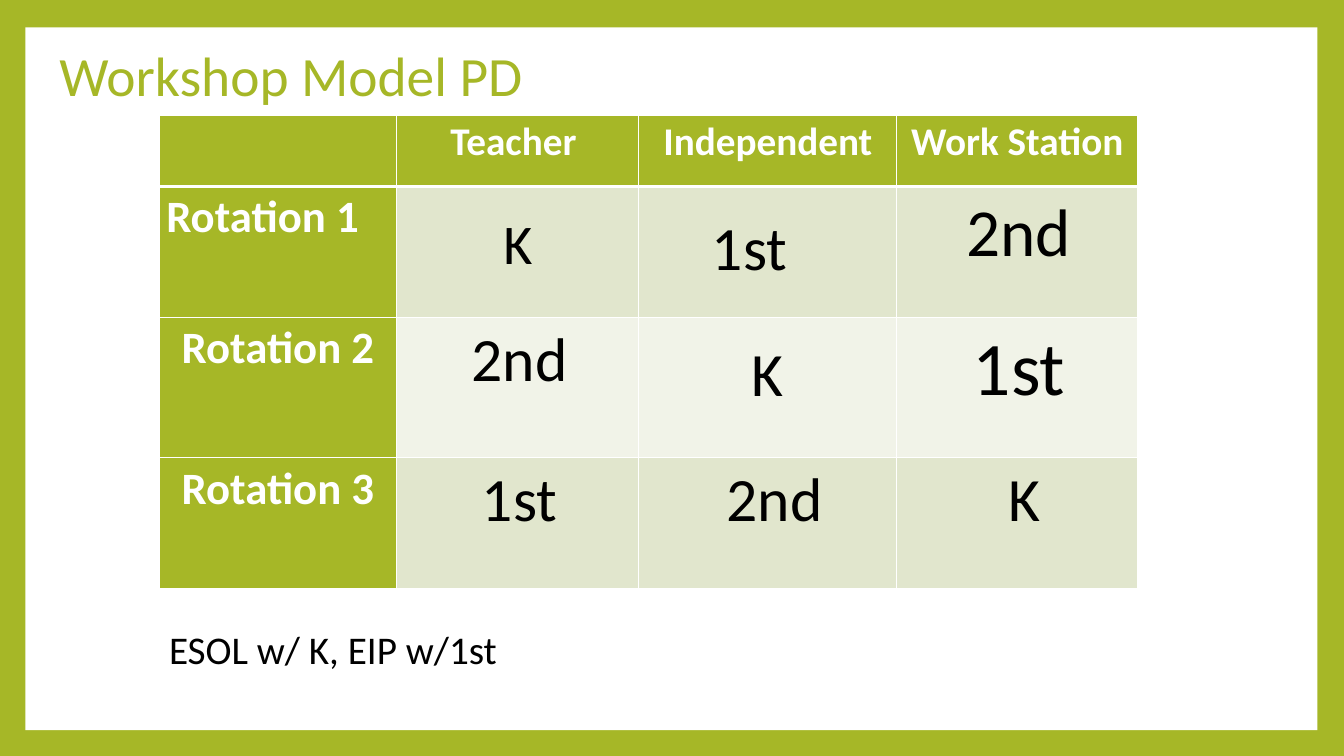
import pptx
import pptx.dml.color
import pptx.enum.shapes
import pptx.enum.text
import pptx.oxml
import pptx.oxml.ns
import pptx.util

Cm = pptx.util.Cm
Pt = pptx.util.Pt
ALIGN = pptx.enum.text.PP_ALIGN
ANCHOR = pptx.enum.text.MSO_ANCHOR

COLORS = {
    "green": "A6B727",
    "white": "FFFFFF",
    "black": "000000",
    "band_dark": "E1E6CD",
    "band_light": "F1F3E8",
}


def add_text(paragraph, text, size, color, bold=False):
    run = paragraph.add_run()
    run.text = text
    run.font.name = "Calibri"
    run.font.size = Pt(size)
    run.font.bold = bold
    run.font.color.rgb = pptx.dml.color.RGBColor.from_string(COLORS[color])


def add_border(cell, side, width):
    line = pptx.oxml.parse_xml(
        f'<a:{side} {pptx.oxml.ns.nsdecls("a")} w="{Pt(width)}">'
        f'<a:solidFill><a:srgbClr val="{COLORS["white"]}"/></a:solidFill></a:{side}>'
    )
    cell._tc.get_or_add_tcPr().append(line)


presentation = pptx.Presentation()
presentation.slide_width = Cm(33.87)
presentation.slide_height = Cm(19.05)
slide = presentation.slides.add_slide(presentation.slide_layouts[5])

# Green frame around a white panel
slide.background.fill.solid()
slide.background.fill.fore_color.rgb = pptx.dml.color.RGBColor.from_string(COLORS["green"])
panel = slide.shapes.add_shape(
    pptx.enum.shapes.MSO_SHAPE.RECTANGLE, Cm(0.64), Cm(0.69), Cm(32.56), Cm(17.71)
)
panel.shadow.inherit = False
panel.fill.solid()
panel.fill.fore_color.rgb = pptx.dml.color.RGBColor.from_string(COLORS["white"])
panel.line.fill.background()

# Title, in front of the panel
title = slide.shapes.title
title._element.addprevious(panel._element)
title.left, title.top, title.width, title.height = Cm(1.24), Cm(1.09), Cm(27.43), Cm(1.8)
title.text_frame.word_wrap = True
title.text_frame.auto_size = pptx.enum.text.MSO_AUTO_SIZE.NONE
title.text_frame.vertical_anchor = ANCHOR.MIDDLE
paragraph = title.text_frame.paragraphs[0]
paragraph.alignment = ALIGN.LEFT
paragraph.line_spacing = 0.9
add_text(paragraph, "Workshop Model PD", 39.6, "green")

# Rotation table: text, size, left margin and top margin of each cell in cm
SIDE = 0.18
column_widths = [5.99, 6.1, 6.5, 6.07]
row_heights = [1.8, 3.3, 3.53, 3.3]
rotations = [
    [("", 28, SIDE, 0), ("Teacher", 28, SIDE, 0),
     ("Independent", 28, SIDE, 0), ("Work Station", 28, SIDE, 0)],
    [("Rotation 1", 32, SIDE, 0), ("K", 40, SIDE, 0.5),
     ("1st", 44, 1.84, 0.5), ("2nd", 48, 0.27, 0)],
    [("Rotation 2", 32, SIDE, 0), ("2nd", 44, 0.27, 0),
     ("K", 44, SIDE, 0.37), ("1st", 54, 0.27, 0)],
    [("Rotation 3", 32, SIDE, 0), ("1st", 44, 0.27, 0),
     ("2nd", 44, 0.53, 0), ("K", 44, 0.53, 0)],
]
left_aligned = [(1, 0), (1, 2)]

table = slide.shapes.add_table(
    4, 4, Cm(4.01), Cm(2.9), Cm(sum(column_widths)), Cm(sum(row_heights))
).table
for column, width in zip(table.columns, column_widths):
    column.width = Cm(width)
for row, height in zip(table.rows, row_heights):
    row.height = Cm(height)

for row_index, row_cells in enumerate(rotations):
    for column_index, (text, size, left, top) in enumerate(row_cells):
        cell = table.cell(row_index, column_index)
        heading = row_index == 0 or column_index == 0

        # Borders: thick rule below the header row
        add_border(cell, "lnL", 1)
        add_border(cell, "lnR", 1)
        add_border(cell, "lnT", 3 if row_index == 1 else 1)
        add_border(cell, "lnB", 3 if row_index == 0 else 1)

        # Fill: green headings, banded body
        band = "band_light" if row_index == 2 else "band_dark"
        cell.fill.solid()
        cell.fill.fore_color.rgb = pptx.dml.color.RGBColor.from_string(
            COLORS["green" if heading else band]
        )

        # Text
        cell.margin_left, cell.margin_right = Cm(left), Cm(SIDE)
        cell.margin_top, cell.margin_bottom = Cm(top), Cm(0)
        cell.vertical_anchor = ANCHOR.TOP
        paragraph = cell.text_frame.paragraphs[0]
        paragraph.line_spacing = 1.07
        is_left = (row_index, column_index) in left_aligned
        paragraph.alignment = ALIGN.LEFT if is_left else ALIGN.CENTER
        if text:
            add_text(paragraph, text, size, "white" if heading else "black", heading)

# The header over the teacher column sits slightly left of centre
table.cell(0, 1).margin_right = Cm(0.4)

# Note below the table
note = slide.shapes.add_textbox(Cm(4.01), Cm(15.62), Cm(25.25), Cm(1.45))
note.text_frame.word_wrap = True
add_text(note.text_frame.paragraphs[0], "ESOL w/ K, EIP w/1st", 28, "black")

presentation.save("out.pptx")
